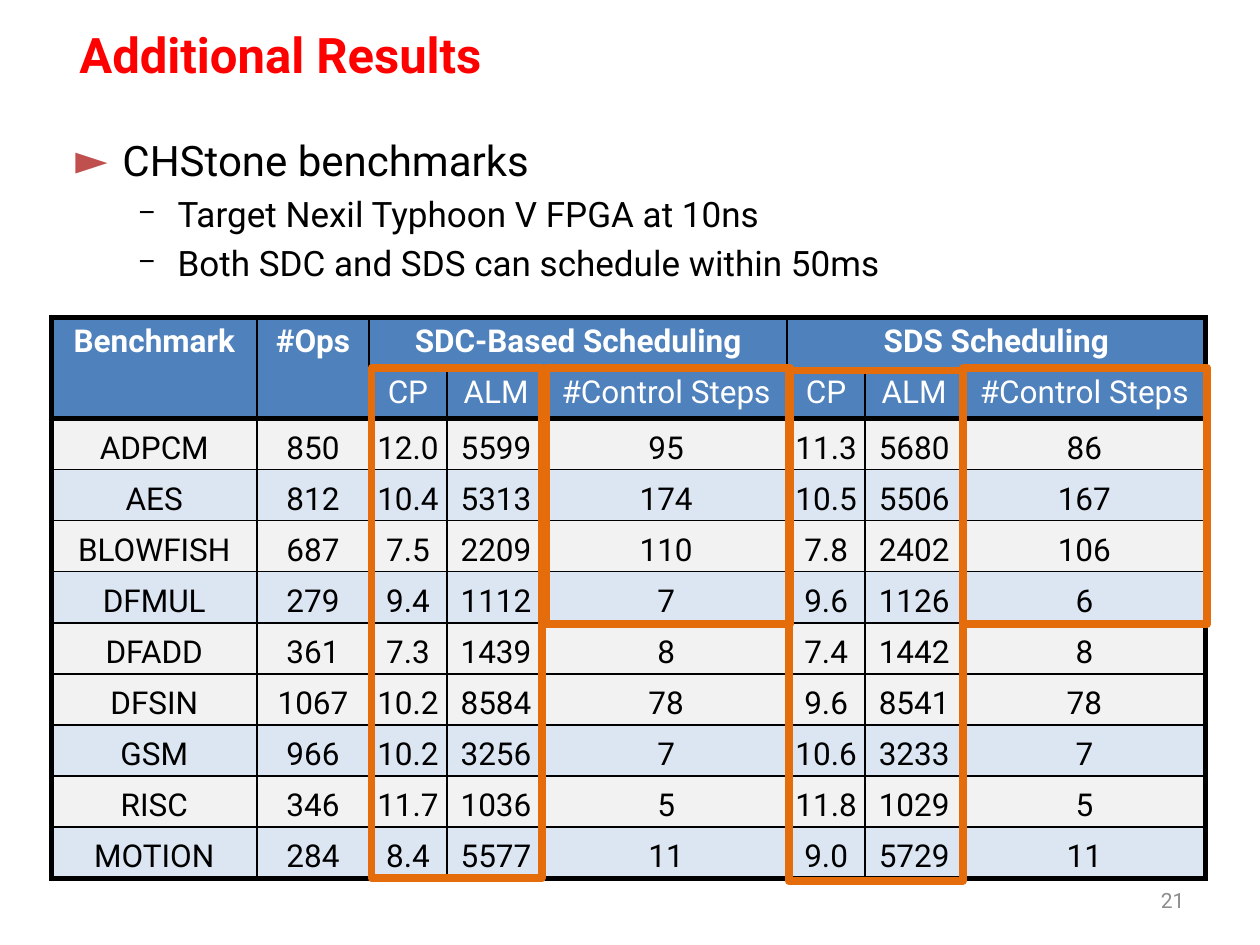
from lxml import etree
from pptx import Presentation
from pptx.dml.color import RGBColor
from pptx.enum.shapes import MSO_SHAPE
from pptx.enum.text import MSO_ANCHOR, PP_ALIGN
from pptx.oxml.ns import qn
from pptx.util import Cm, Pt

RECTANGLE = MSO_SHAPE.RECTANGLE
TOP, MIDDLE, BOTTOM = MSO_ANCHOR.TOP, MSO_ANCHOR.MIDDLE, MSO_ANCHOR.BOTTOM
LEFT, CENTER, RIGHT = PP_ALIGN.LEFT, PP_ALIGN.CENTER, PP_ALIGN.RIGHT

FONT = "Roboto"
COLORS = {
    "title": "FF0000", "text": "000000", "number": "8C8C8C",
    "bullet": "C0504D", "header": "4F81BD", "header_text": "FFFFFF",
    "light": "F2F2F2", "blue": "DCE6F2", "border": "000000",
    "highlight": "E46C0A",
}

BULLETS = [  # text, size, left indent, hanging indent, space before, marker
    ("CHStone benchmarks", 24, 0.95, 0.95, 0, "►"),
    ("Target Nexil Typhoon V FPGA at 10ns", 20, 2.06, 0.8, 4, "–"),
    ("Both SDC and SDS can schedule within 50ms", 20, 2.06, 0.8, 4, "–"),
]

HEADER_ROWS = 2
GROUP_WIDTHS = [1.57, 1.98, 4.88]
COLUMN_WIDTHS = [4.14, 2.26] + GROUP_WIDTHS * 2
HEADER_HEIGHT, BODY_HEIGHT = 0.99, 1.03
HEADER_SPANS = [  # first row, first column, last row, last column
    (0, 0, 1, 0), (0, 1, 1, 1), (0, 2, 0, 4), (0, 5, 0, 7),
]
GROUP_HEADINGS = ["CP", "ALM", "#Control Steps"]
HEADINGS = [
    ["Benchmark", "#Ops", "SDC-Based Scheduling", "", "", "SDS Scheduling", "", ""],
    ["", ""] + GROUP_HEADINGS * 2,
]
RESULTS = [  # fill, then the cells
    ("light", "ADPCM", "850", "12.0", "5599", "95", "11.3", "5680", "86"),
    ("blue", "AES", "812", "10.4", "5313", "174", "10.5", "5506", "167"),
    ("light", "BLOWFISH", "687", "7.5", "2209", "110", "7.8", "2402", "106"),
    ("blue", "DFMUL", "279", "9.4", "1112", "7", "9.6", "1126", "6"),
    ("light", "DFADD", "361", "7.3", "1439", "8", "7.4", "1442", "8"),
    ("light", "DFSIN", "1067", "10.2", "8584", "78", "9.6", "8541", "78"),
    ("blue", "GSM", "966", "10.2", "3256", "7", "10.6", "3233", "7"),
    ("light", "RISC", "346", "11.7", "1036", "5", "11.8", "1029", "5"),
    ("blue", "MOTION", "284", "8.4", "5577", "11", "9.0", "5729", "11"),
]
HIGHLIGHTS = [  # left and top from the table's corner, width, height
    (9.96, 1.02, 4.93, 5.16), (18.37, 1.02, 4.93, 5.16),
    (6.45, 1.02, 3.43, 10.29), (14.86, 1.07, 3.51, 10.29),
]


def rgb(name):
    return RGBColor.from_string(COLORS[name])


def write_text(paragraph, text, size=18, color="text", bold=False, align=LEFT):
    paragraph.alignment = align
    run = paragraph.add_run()
    run.text = text
    run.font.name = FONT
    run.font.size = Pt(size)
    run.font.bold = bold
    run.font.color.rgb = rgb(color)


def add_text_frame(slide, box, anchor=TOP):
    frame = slide.shapes.add_textbox(*map(Cm, box)).text_frame
    frame.word_wrap = True
    frame.vertical_anchor = anchor
    return frame


def add_line(slide, box, text, **text_format):
    frame = add_text_frame(slide, box, MIDDLE)
    write_text(frame.paragraphs[0], text, **text_format)


def set_bullet(paragraph, marker, left, hanging):
    properties = paragraph._p.get_or_add_pPr()
    properties.set("marL", str(Cm(left)))
    properties.set("indent", str(-Cm(hanging)))
    if marker == "►":
        color = etree.SubElement(properties, qn("a:buClr"))
        etree.SubElement(color, qn("a:srgbClr"), val=COLORS["bullet"])
    else:
        etree.SubElement(properties, qn("a:buSzPct"), val="80000")
    etree.SubElement(properties, qn("a:buFont"), typeface=FONT)
    etree.SubElement(properties, qn("a:buChar"), char=marker)


def add_bullets(slide, box):
    frame = add_text_frame(slide, box)
    for index, (text, size, left, hanging, before, marker) in enumerate(BULLETS):
        paragraph = frame.add_paragraph() if index else frame.paragraphs[0]
        paragraph.space_before = Pt(before)
        write_text(paragraph, text, size=size)
        set_bullet(paragraph, marker, left, hanging)


def set_borders(cell, widths):
    properties = cell._tc.get_or_add_tcPr()
    for position, (side, width) in enumerate(zip("LRTB", widths)):
        line = etree.Element(qn(f"a:ln{side}"), w=str(Pt(width)))
        fill = etree.SubElement(line, qn("a:solidFill"))
        etree.SubElement(fill, qn("a:srgbClr"), val=COLORS["border"])
        properties.insert(position, line)


def add_results_table(slide, left, top):
    rows = HEADINGS + [list(result[1:]) for result in RESULTS]
    fills = ["header"] * HEADER_ROWS + [result[0] for result in RESULTS]
    heights = [HEADER_HEIGHT] * HEADER_ROWS + [BODY_HEIGHT] * len(RESULTS)
    box = (left, top, sum(COLUMN_WIDTHS), sum(heights))
    table = slide.shapes.add_table(
        len(rows), len(COLUMN_WIDTHS), *map(Cm, box)).table
    for column, width in zip(table.columns, COLUMN_WIDTHS):
        column.width = Cm(width)
    for row, height in zip(table.rows, heights):
        row.height = Cm(height)

    # Merged headings
    span_ends = {}
    for row, column, last_row, last_column in HEADER_SPANS:
        table.cell(row, column).merge(table.cell(last_row, last_column))
        span_ends[row, column] = last_row, last_column

    # Cells, with thick lines around the table and below the headings
    thick_rows = {0, HEADER_ROWS, len(rows)}
    thick_columns = {0, len(COLUMN_WIDTHS)}
    for row, texts in enumerate(rows):
        is_header = row < HEADER_ROWS
        for column, text in enumerate(texts):
            cell = table.cell(row, column)
            cell.fill.solid()
            cell.fill.fore_color.rgb = rgb(fills[row])
            last_row, last_column = span_ends.get((row, column), (row, column))
            set_borders(cell, [
                3 if column in thick_columns else 1,
                3 if last_column + 1 in thick_columns else 1,
                3 if row in thick_rows else 1,
                3 if last_row + 1 in thick_rows else 1,
            ])
            if not is_header:
                cell.vertical_anchor = BOTTOM
                cell.margin_left = cell.margin_right = Cm(0.08)
                cell.margin_top = cell.margin_bottom = Cm(0.05)
            if text:
                write_text(cell.text_frame.paragraphs[0], text, bold=row == 0,
                           color="header_text" if is_header else "text",
                           align=CENTER)


def add_highlights(slide, left, top):
    for x, y, width, height in HIGHLIGHTS:
        shape = slide.shapes.add_shape(
            RECTANGLE, Cm(left + x), Cm(top + y), Cm(width), Cm(height))
        shape.shadow.inherit = False
        shape.fill.background()
        shape.line.color.rgb = rgb("highlight")
        shape.line.width = Pt(4.5)


def main():
    presentation = Presentation()
    presentation.slide_width, presentation.slide_height = Cm(25.4), Cm(19.05)
    slide = presentation.slides.add_slide(presentation.slide_layouts[6])
    add_bullets(slide, (1.27, 2.59, 22.86, 3.7))
    add_line(slide, (18.2, 17.65, 5.93, 1.01), "21",
             size=12, color="number", align=RIGHT)
    add_line(slide, (1.35, 0.08, 22.86, 2.03), "Additional Results",
             size=28, color="title", bold=True)
    add_results_table(slide, 1.04, 6.4)
    add_highlights(slide, 1.04, 6.4)
    presentation.save("out.pptx")


if __name__ == "__main__":
    main()
